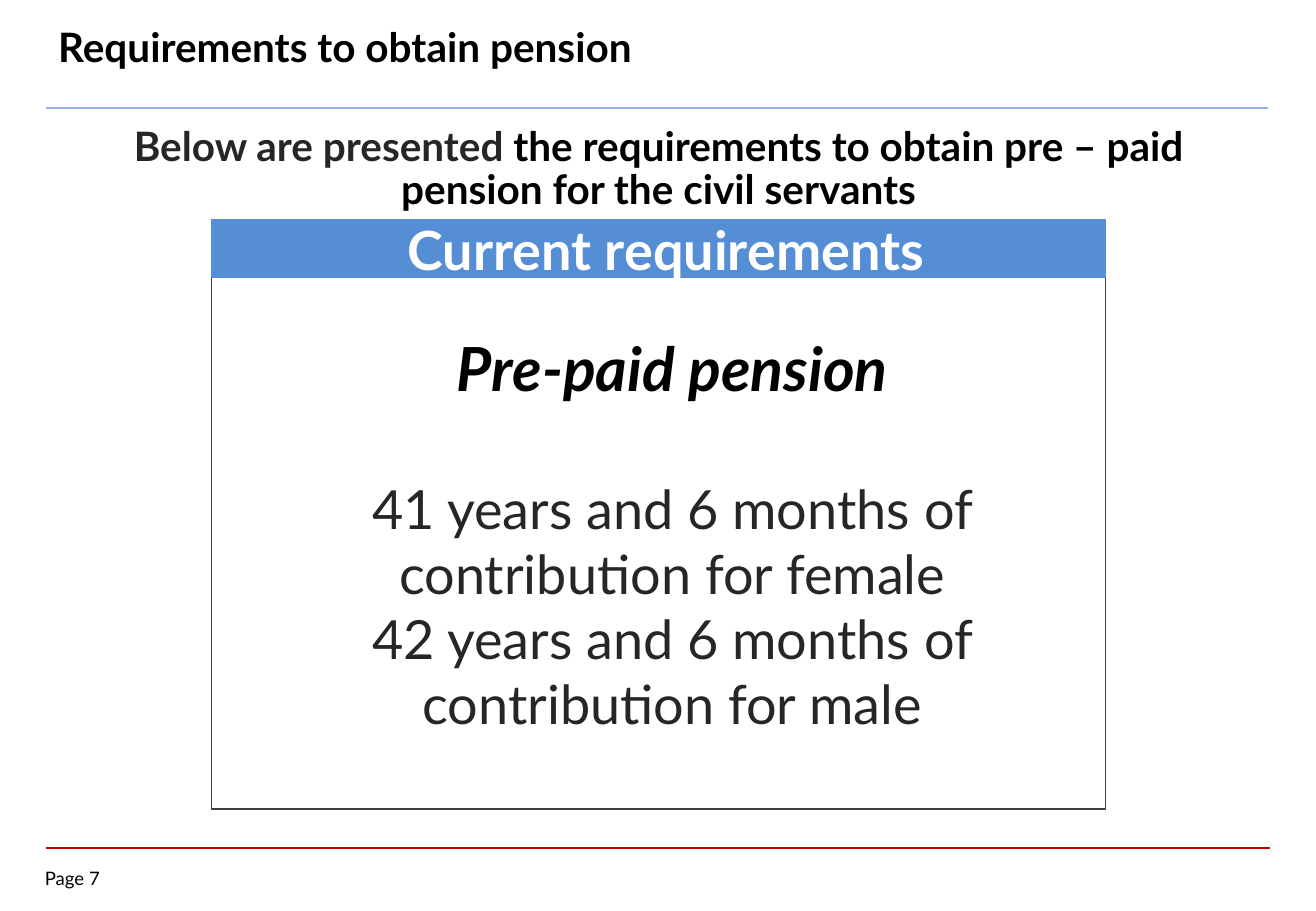
import pptx
import pptx.util
import pptx.dml.color
import pptx.enum.shapes
import pptx.enum.text
import pptx.oxml.ns
import lxml.etree

Pt = pptx.util.Pt
LEFT, CENTER = pptx.enum.text.PP_ALIGN.LEFT, pptx.enum.text.PP_ALIGN.CENTER
COLORS = {
    "black": "000000", "dark": "262626", "white": "FFFFFF", "frame": "404040",
    "blue": "558ED5", "light_blue": "8EB4E3", "red": "C00000",
}


def rgb(name):
    return pptx.dml.color.RGBColor.from_string(COLORS[name])


def write(paragraph, text, size, color, bold=False, italic=False, align=LEFT):
    paragraph.text = text
    paragraph.alignment = align
    font = paragraph.font
    font.name, font.size, font.bold, font.italic = "Lato", Pt(size), bold, italic
    font.color.rgb = rgb(color)


deck = pptx.Presentation()
deck.slide_width, deck.slide_height = Pt(780), Pt(540)
slide = deck.slides.add_slide(deck.slide_layouts[6])
shapes = slide.shapes

# Rules above the footer and below the title
for y, right, color, weight in [(502.5, 753, "red", 1), (64, 751.5, "light_blue", 1.5)]:
    rule = shapes.add_connector(
        pptx.enum.shapes.MSO_CONNECTOR.STRAIGHT, Pt(27.4), Pt(y), Pt(right), Pt(y))
    rule.line.color.rgb = rgb(color)
    rule.line.width = Pt(weight)
    lxml.etree.SubElement(rule._element.spPr, pptx.oxml.ns.qn("a:effectLst"))

# Page number
page = shapes.add_textbox(Pt(26.6), Pt(514), Pt(52.6), Pt(16)).text_frame
page.margin_left = page.margin_right = page.margin_top = page.margin_bottom = 0
write(page.paragraphs[0], "Page 7", 11, "black")

# Title
title = shapes.add_textbox(Pt(27.4), Pt(9.4), Pt(714), Pt(51)).text_frame
title.word_wrap = True
write(title.paragraphs[0], "Requirements to obtain pension", 24, "black", bold=True)

# Introduction in two colours
intro = shapes.add_textbox(Pt(27.4), Pt(71.3), Pt(726), Pt(34)).text_frame
intro.word_wrap = True
sentence = intro.paragraphs[0]
write(sentence, "Below are presented ", 24, "dark", bold=True, align=CENTER)
sentence.line_spacing = 0.9
sentence.runs[0].font.color.rgb = rgb("dark")
subject = sentence.add_run()
subject.text = "the requirements to obtain pre – paid pension for the civil servants"
subject.font.color.rgb = rgb("black")

# Requirements panel and its header band: top, height, fill, line, paragraphs
panels = [
    (152, 327.6, None, "frame", [
        ("Pre-paid pension", 36, "black", True, True),
        ("41 years and 6 months of contribution for female", 32, "dark", False, False),
        ("42 years and 6 months of contribution for male", 32, "dark", False, False),
    ]),
    (130.3, 34, "blue", "blue", [("Current requirements ", 32, "white", True, False)]),
]
for top, height, fill, line, texts in panels:
    panel = shapes.add_shape(
        pptx.enum.shapes.MSO_SHAPE.RECTANGLE, Pt(125.3), Pt(top), Pt(530), Pt(height))
    panel.shadow.inherit = False
    if fill:
        panel.fill.solid()
        panel.fill.fore_color.rgb = rgb(fill)
    else:
        panel.fill.background()
    panel.line.color.rgb = rgb(line)
    panel.line.width = Pt(1)
    frame = panel.text_frame
    frame.word_wrap = True
    frame.vertical_anchor = pptx.enum.text.MSO_ANCHOR.MIDDLE
    frame.margin_left, frame.margin_right = Pt(22.3), Pt(5.8)
    frame.margin_top = frame.margin_bottom = 0
    for i, (text, size, color, bold, italic) in enumerate(texts):
        paragraph = frame.add_paragraph() if i else frame.paragraphs[0]
        write(paragraph, text, size, color, bold, italic, CENTER)
        if italic:
            paragraph.space_after = Pt(43)

deck.save("out.pptx")
